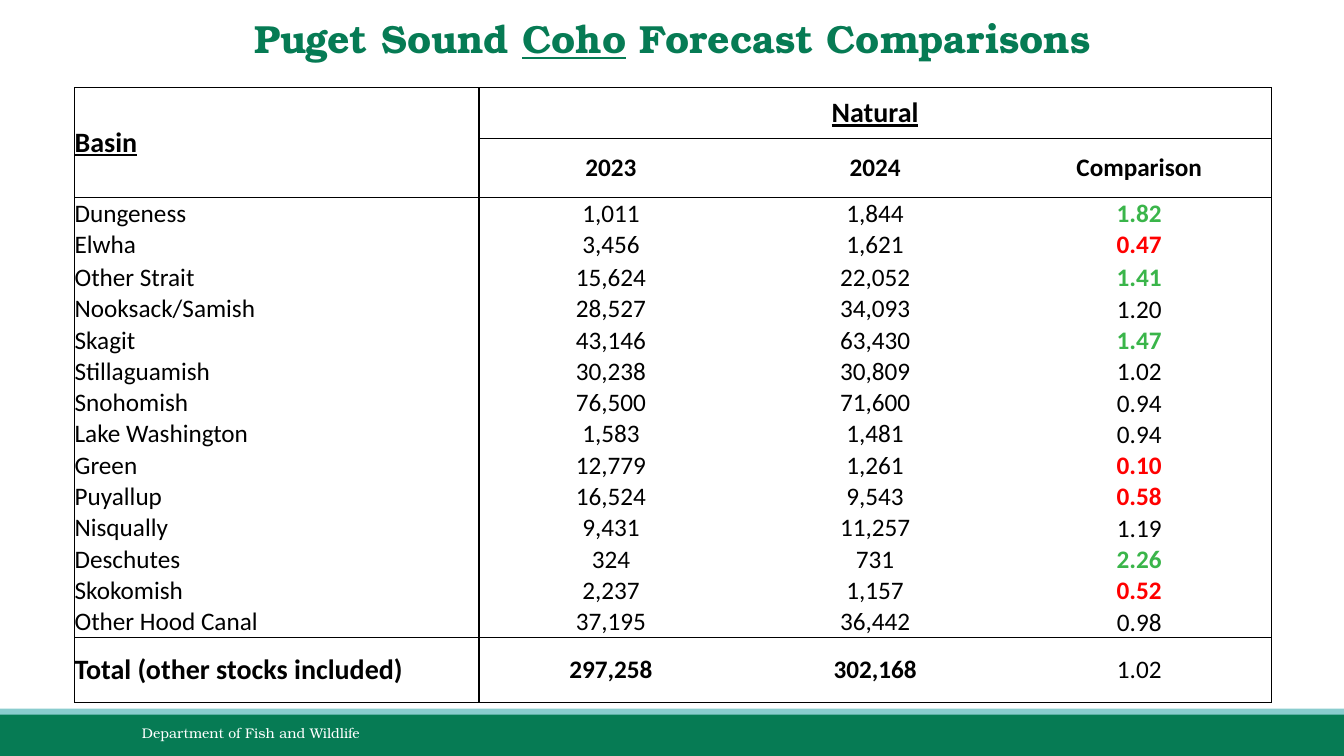
"""Build the Puget Sound coho forecast comparison slide."""
from dataclasses import dataclass

from lxml.etree import SubElement
from pptx import Presentation
from pptx.dml.color import RGBColor as Rgb
from pptx.enum.shapes import MSO_SHAPE as Shape
from pptx.enum.text import MSO_ANCHOR as Anchor, PP_ALIGN as Align
from pptx.oxml.ns import qn
from pptx.util import Inches, Pt

TITLE = [("Puget Sound ", False), ("Coho", True), (" Forecast Comparisons", False)]
AGENCY = "Department of Fish and Wildlife"
HEADERS = [("Basin", "Natural", "", ""), ("", "2023", "2024", "Comparison")]
BASINS = [
    ("Dungeness", "1,011", "1,844", "1.82"),
    ("Elwha", "3,456", "1,621", "0.47"),
    ("Other Strait", "15,624", "22,052", "1.41"),
    ("Nooksack/Samish", "28,527", "34,093", "1.20"),
    ("Skagit", "43,146", "63,430", "1.47"),
    ("Stillaguamish", "30,238", "30,809", "1.02"),
    ("Snohomish", "76,500", "71,600", "0.94"),
    ("Lake Washington", "1,583", "1,481", "0.94"),
    ("Green", "12,779", "1,261", "0.10"),
    ("Puyallup", "16,524", "9,543", "0.58"),
    ("Nisqually", "9,431", "11,257", "1.19"),
    ("Deschutes", "324", "731", "2.26"),
    ("Skokomish", "2,237", "1,157", "0.52"),
    ("Other Hood Canal", "37,195", "36,442", "0.98"),
]
TOTAL = ("Total (other stocks included)", "297,258", "302,168", "1.02")

ROWS = [*HEADERS, *BASINS, TOTAL]
LAST = len(ROWS) - 1
COLUMN_WIDTHS = [4.01, 2.62, 2.62, 2.62]
ROW_HEIGHTS = [0.5, 0.59] + [0.33 if row[0] == "Other Strait" else 0.31 for row in BASINS] + [0.65]
RULED_ROWS = {0, 2, LAST, LAST + 1}
RULED_COLUMNS = {0, 1, len(COLUMN_WIDTHS)}
STRONG_RISE, STRONG_FALL = 1.4, 0.6


@dataclass(frozen=True)
class Theme:
    """Colours, fonts and type sizes."""
    green: str = "067B54"
    teal: str = "8ACCCE"
    white: str = "FFFFFF"
    black: str = "000000"
    rise: str = "3AB54A"
    fall: str = "FF0000"
    display: str = "TeX Gyre Bonum"
    body: str = "Calibri"
    title_size: int = 28
    heading_size: int = 20
    body_size: int = 18
    footer_size: int = 10


THEME = Theme()


def add_span(para, text, font, size, color, bold=False, underline=False):
    """Append one formatted run."""
    span = para.add_run()
    span.text = text
    span.font.name, span.font.size = font, Pt(size)
    span.font.bold, span.font.underline = bold, underline
    span.font.color.rgb = Rgb.from_string(color)


def add_bar(page, top, height, color):
    """Draw a full-width footer band."""
    bar = page.shapes.add_shape(Shape.RECTANGLE, 0, Inches(top), Inches(13.33), Inches(height))
    bar.shadow.inherit = False
    bar.fill.solid()
    bar.fill.fore_color.rgb = Rgb.from_string(color)
    bar.line.fill.background()


def add_footer(page):
    """Draw the footer bands and the agency name."""
    add_bar(page, 7.08, 0.42, THEME.green)
    add_bar(page, 7.03, 0.06, THEME.teal)
    box = page.shapes.add_textbox(Inches(1.31), Inches(7.12), Inches(4.22), Inches(0.3))
    box.text_frame.word_wrap = True
    box.text_frame.vertical_anchor = Anchor.MIDDLE
    add_span(box.text_frame.paragraphs[0], AGENCY, THEME.display, THEME.footer_size, THEME.white)


def add_title(page):
    """Fill the title placeholder."""
    title = page.shapes.title
    title.left, title.top = Inches(2.17), Inches(-0.01)
    title.width, title.height = Inches(9), Inches(0.78)
    title.text_frame.vertical_anchor = Anchor.MIDDLE
    para = title.text_frame.paragraphs[0]
    para.alignment = Align.CENTER
    for text, underline in TITLE:
        add_span(para, text, THEME.display, THEME.title_size, THEME.green, True, underline)


def set_borders(cell, row, column):
    """Rule the edges of a cell that lie on the table's ruled boundaries."""
    height = cell.span_height if cell.is_merge_origin else 1
    width = cell.span_width if cell.is_merge_origin else 1

    def ruled_row(edge):
        return edge in RULED_ROWS or (edge == 1 and column > 0)

    edges = {
        "a:lnL": column in RULED_COLUMNS,
        "a:lnR": column + width in RULED_COLUMNS,
        "a:lnT": ruled_row(row),
        "a:lnB": ruled_row(row + height),
    }
    properties = cell._tc.get_or_add_tcPr()
    for tag, ruled in edges.items():
        line = SubElement(properties, qn(tag), w=str(Pt(1)))
        if ruled:
            SubElement(SubElement(line, qn("a:solidFill")), qn("a:srgbClr"), val=THEME.black)
        else:
            SubElement(line, qn("a:noFill"))


def text_style(row, column, text):
    """Return size, colour, bold and underline for a cell."""
    if row < len(HEADERS):
        top = row == 0
        return THEME.heading_size if top else THEME.body_size, THEME.black, True, top
    if row == LAST:
        size = THEME.heading_size if column == 0 else THEME.body_size
        return size, THEME.black, column < 3, False
    color = THEME.black
    if column == 3 and float(text) >= STRONG_RISE:
        color = THEME.rise
    elif column == 3 and float(text) <= STRONG_FALL:
        color = THEME.fall
    return THEME.body_size, color, color != THEME.black, False


def fill_cell(cell, row, column, text):
    """Format one cell and write its text."""
    is_basin = len(HEADERS) <= row < LAST
    set_borders(cell, row, column)
    cell.fill.solid()
    cell.fill.fore_color.rgb = Rgb.from_string(THEME.white)
    cell.vertical_anchor = Anchor.BOTTOM if is_basin else Anchor.MIDDLE
    inset = Inches(0.01 if is_basin and column == 3 else 0)
    cell.margin_left = cell.margin_right = cell.margin_top = inset
    cell.margin_bottom = 0
    if text:
        para = cell.text_frame.paragraphs[0]
        para.alignment = Align.LEFT if column == 0 else Align.CENTER
        size, color, bold, underline = text_style(row, column, text)
        add_span(para, text, THEME.body, size, color, bold, underline)


def add_forecasts(page):
    """Add the forecast table."""
    frame = page.shapes.add_table(
        len(ROWS), len(COLUMN_WIDTHS), Inches(0.74), Inches(0.87),
        Inches(sum(COLUMN_WIDTHS)), Inches(sum(ROW_HEIGHTS)))
    table = frame.table
    table.first_row = table.horz_banding = False
    for column, width in zip(table.columns, COLUMN_WIDTHS):
        column.width = Inches(width)
    for row, height in zip(table.rows, ROW_HEIGHTS):
        row.height = Inches(height)
    table.cell(0, 0).merge(table.cell(1, 0))
    table.cell(0, 1).merge(table.cell(0, 3))
    for row, texts in enumerate(ROWS):
        for column, text in enumerate(texts):
            fill_cell(table.cell(row, column), row, column, text)


def main():
    """Build and save the deck."""
    deck = Presentation()
    deck.slide_width, deck.slide_height = Inches(13.33), Inches(7.5)
    page = deck.slides.add_slide(deck.slide_layouts[5])
    add_footer(page)
    add_title(page)
    add_forecasts(page)
    deck.save("out.pptx")


if __name__ == "__main__":
    main()
